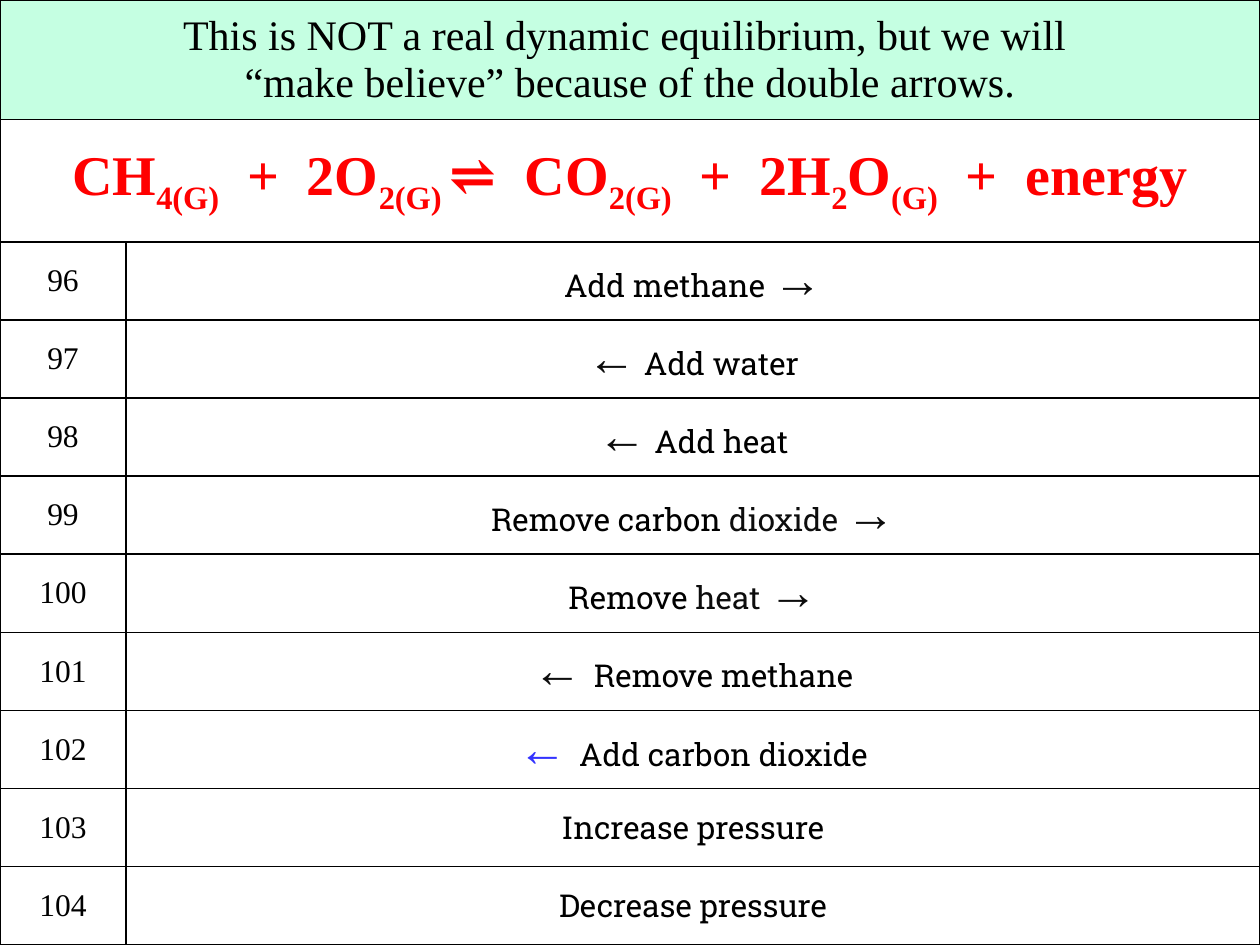
from dataclasses import dataclass

from lxml import etree
from pptx import Presentation
from pptx.dml.color import RGBColor
from pptx.enum.text import MSO_ANCHOR, PP_ALIGN
from pptx.oxml.ns import qn
from pptx.util import Inches, Pt

CENTER = PP_ALIGN.CENTER
MIDDLE = MSO_ANCHOR.MIDDLE
BLANK = 6


@dataclass(frozen=True)
class Theme:
    serif: str = "Times New Roman"
    slab: str = "Roboto Slab"
    black: str = "000000"
    ink: str = "0D0D0D"
    red: str = "FF0000"
    blue: str = "3333FF"
    mint: str = "C5FFE2"
    head: int = 24
    formula: int = 32
    body: int = 18
    arrow: int = 28
    border: float = 1


THEME = Theme()
COLS = [1, 9]
ROWS = [0.95, 0.97] + [0.62] * 9
FIRST = 96

HEAD = ["This is NOT a real dynamic equilibrium, but we will ",
        "“make believe” because of the double arrows."]

# Normal and subscript parts take turns.
FORMULA = ["CH", "4(G)", "  +  2O", "2(G) ", "⇌  CO", "2(G)",
           "  +  2H", "2", "O", "(G)", "  +  energy"]


def word(text, color=THEME.black):
    return text, THEME.slab, THEME.body, color


def arrow(text, color=THEME.ink):
    return text, THEME.serif, THEME.arrow, color


GAP = (" ", THEME.serif, THEME.body, THEME.blue)
STRESSES = [
    [word("Add methane "), arrow("→")],
    [arrow("←"), GAP, word("Add water")],
    [arrow("←"), GAP, word("Add heat")],
    [word("Remove carbon "), word("dioxide ", THEME.ink), arrow("→")],
    [word("Remove "), word("heat ", THEME.ink), arrow("→")],
    [arrow("← "), word("Remove methane")],
    [arrow("← ", THEME.blue), word("Add carbon dioxide")],
    [word("Increase pressure")],
    [word("Decrease pressure")],
]


def add_run(para, text, face, size, color, bold=False):
    run = para.add_run()
    run.text = text
    font = run.font
    font.name = face
    font.size = Pt(size)
    font.bold = bold
    font.color.rgb = RGBColor.from_string(color)
    return run


def set_border(cell):
    props = cell._tc.get_or_add_tcPr()
    for side in ("lnL", "lnR", "lnT", "lnB"):
        line = etree.SubElement(props, qn(f"a:{side}"), w=str(Pt(THEME.border)))
        fill = etree.SubElement(line, qn("a:solidFill"))
        etree.SubElement(fill, qn("a:srgbClr"), val=THEME.black)


def style_cell(cell):
    set_border(cell)
    cell.fill.background()
    cell.vertical_anchor = MIDDLE
    cell.text_frame.paragraphs[0].alignment = CENTER


def add_grid(slide):
    frame = slide.shapes.add_table(len(ROWS), len(COLS), 0, 0,
                                   Inches(sum(COLS)), Inches(sum(ROWS)))
    table = frame.table
    table.first_row = False
    table.horz_banding = False
    for col, width in zip(table.columns, COLS):
        col.width = Inches(width)
    for row, height in zip(table.rows, ROWS):
        row.height = Inches(height)
        for cell in row.cells:
            style_cell(cell)
    return table


def first_para(cell):
    return cell.text_frame.paragraphs[0]


def span_row(table, row):
    """Merge a whole row and return its paragraph."""
    cell = table.cell(row, 0)
    cell.merge(table.cell(row, len(COLS) - 1))
    return first_para(cell)


def fill_head(table):
    para = span_row(table, 0)
    fill = table.cell(0, 0).fill
    fill.solid()
    fill.fore_color.rgb = RGBColor.from_string(THEME.mint)
    for i, line in enumerate(HEAD):
        if i:
            para.add_line_break()
        add_run(para, line, THEME.serif, THEME.head, THEME.black)


def fill_formula(table):
    para = span_row(table, 1)
    for i, part in enumerate(FORMULA):
        run = add_run(para, part, THEME.serif, THEME.formula, THEME.red, True)
        if i % 2:
            run.font._element.set("baseline", "-25000")


def fill_stress(table):
    for i, parts in enumerate(STRESSES):
        label, stress = table.rows[i + 2].cells
        add_run(first_para(label), str(FIRST + i),
                THEME.serif, THEME.body, THEME.black)
        for part in parts:
            add_run(first_para(stress), *part)


def main():
    deck = Presentation()
    deck.slide_width = Inches(10)
    deck.slide_height = Inches(7.5)
    slide = deck.slides.add_slide(deck.slide_layouts[BLANK])
    table = add_grid(slide)
    fill_head(table)
    fill_formula(table)
    fill_stress(table)
    deck.save("out.pptx")


if __name__ == "__main__":
    main()
